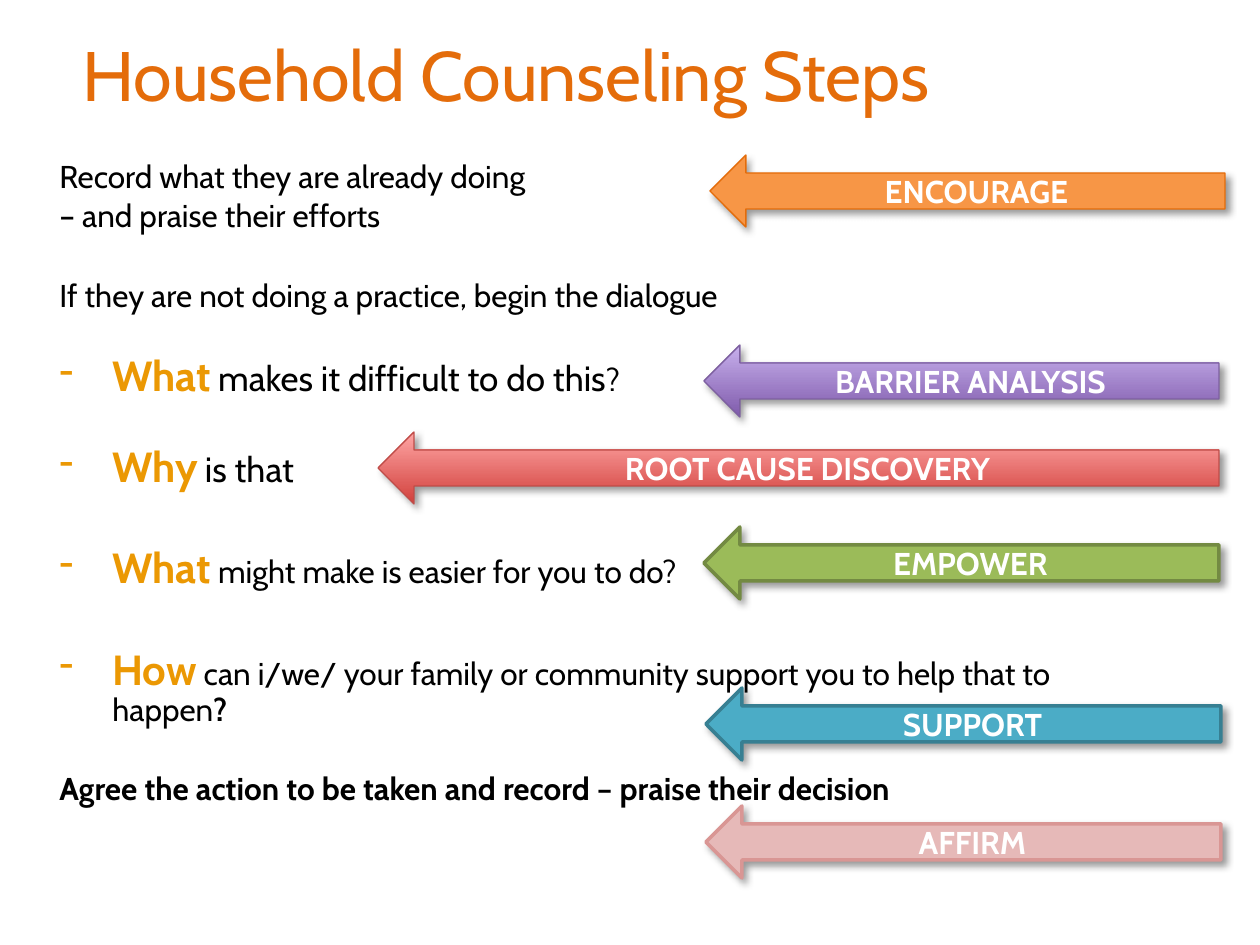
from dataclasses import dataclass
from typing import Any

from lxml import etree
from pptx import Presentation
from pptx import util as u
from pptx.dml.color import RGBColor
from pptx.enum import shapes, text
from pptx.oxml.ns import qn

PX = 914400 // 126
BLACK = RGBColor(0x00, 0x00, 0x00)
WHITE = RGBColor(0xFF, 0xFF, 0xFF)
ORANGE = RGBColor(0xE4, 0x6C, 0x0A)
AMBER = RGBColor(0xEB, 0x98, 0x03)
LIGHT_ORANGE = RGBColor(0xF7, 0x96, 0x46)
PURPLE = RGBColor(0x7F, 0x5B, 0xAB)
LILAC = RGBColor(0xC8, 0xB0, 0xED)
PURPLE_EDGE = RGBColor(0x7D, 0x60, 0xA0)
RED = RGBColor(0xD1, 0x40, 0x3C)
PINK = RGBColor(0xFF, 0xA6, 0xA5)
RED_EDGE = RGBColor(0xBF, 0x4C, 0x48)
GREEN = RGBColor(0x9B, 0xBB, 0x59)
GREEN_EDGE = RGBColor(0x73, 0x8A, 0x42)
TEAL = RGBColor(0x4B, 0xAC, 0xC6)
TEAL_EDGE = RGBColor(0x37, 0x7F, 0x92)
ROSE = RGBColor(0xE6, 0xB9, 0xB8)
ROSE_EDGE = RGBColor(0xD9, 0x96, 0x94)

# Space before, bulleted, runs of (text, size, colour, bold)
STEPS = [
    (0, False, [("Record what they are already doing", 18, BLACK, False)]),
    (3, False, [("– and praise their efforts", 18, BLACK, False)]),
    (26, False, [("If they are not doing a practice, begin the dialogue", 18, BLACK, False)]),
    (23.5, True, [("What", 24, AMBER, True), (" ", 18, BLACK, False),
                  ("makes it difficult to do this", 20, BLACK, False),
                  ("?", 18, BLACK, False)]),
    (26, True, [("Why", 24, AMBER, True), (" ", 18, BLACK, False),
                ("is that", 20, BLACK, False)]),
    (32, True, [("What", 24, AMBER, True),
                (" might make is easier for you to do?", 18, BLACK, False)]),
    (32, True, [("How", 24, AMBER, True),
                (" can i/we/ your family or community support you to help that to happen",
                 18, BLACK, False), ("?", 18, BLACK, True)]),
    (26, False, [("Agree the action to be taken and record – praise their decision",
                  18, BLACK, True)]),
]

# Label, left, top, width, fill colours from bottom to top, edge, edge width
ARROWS = [
    ("ROOT CAUSE DISCOVERY", 378, 432, 841, (RED, PINK), RED_EDGE, 0.75),
    ("BARRIER ANALYSIS", 704, 345, 515, (PURPLE, LILAC), PURPLE_EDGE, 0.75),
    ("EMPOWER", 704, 527, 515, (GREEN,), GREEN_EDGE, 2),
    ("SUPPORT", 706, 688, 515, (TEAL,), TEAL_EDGE, 2),
    ("ENCOURAGE", 710, 155, 515, (LIGHT_ORANGE,), ORANGE, 0.75),
    ("AFFIRM", 706, 806, 515, (ROSE,), ROSE_EDGE, 2),
]
ARROW_HEIGHT = 72


@dataclass
class Painter:
    page: Any
    face: str = "Cabin"

    def style(self, font, size, color, bold=False):
        font.name, font.size, font.bold = self.face, u.Pt(size), bold
        font.color.rgb = color

    def title(self, words, left, top, width, height):
        box = self.page.shapes.title
        box.left, box.top, box.width, box.height = (
            n * PX for n in (left, top, width, height))
        frame = box.text_frame
        frame.text = words
        frame.vertical_anchor = text.MSO_ANCHOR.MIDDLE
        para = frame.paragraphs[0]
        para.alignment = text.PP_ALIGN.CENTER
        self.style(para.runs[0].font, 40, ORANGE)

    def steps(self, steps, left, top, width, height):
        box = self.page.shapes.add_textbox(*(n * PX for n in (left, top, width, height)))
        frame = box.text_frame
        frame.word_wrap = True
        for index, (gap, bulleted, runs) in enumerate(steps):
            para = frame.add_paragraph() if index else frame.paragraphs[0]
            para.line_spacing = 0.9
            para.space_before = u.Pt(gap)
            self.indent(para, bulleted)
            for words, size, color, bold in runs:
                span = para.add_run()
                span.text = words
                self.style(span.font, size, color, bold)

    def indent(self, para, bulleted):
        """Set the left margin, with a hanging dash if bulleted."""
        props = para._p.get_or_add_pPr()
        props.set("marL", str((100 if bulleted else 47) * PX))
        props.set("indent", str((-53 if bulleted else 0) * PX))
        if bulleted:
            etree.SubElement(props, qn("a:buChar"), char="-")

    def arrow(self, label, left, top, width, colors, edge, weight):
        shape = self.page.shapes.add_shape(
            shapes.MSO_SHAPE.LEFT_ARROW,
            *(n * PX for n in (left, top, width, ARROW_HEIGHT)))
        if len(colors) > 1:
            shape.fill.gradient()
            shape.fill.gradient_angle = 90
            for stop, color in zip(shape.fill.gradient_stops, colors):
                stop.color.rgb = color
        else:
            shape.fill.solid()
            shape.fill.fore_color.rgb = colors[0]
        shape.line.color.rgb = edge
        shape.line.width = u.Pt(weight)
        self.drop_shadow(shape)
        frame = shape.text_frame
        frame.text = label
        frame.vertical_anchor = text.MSO_ANCHOR.MIDDLE
        para = frame.paragraphs[0]
        para.alignment = text.PP_ALIGN.CENTER
        self.style(para.runs[0].font, 18, WHITE, True)

    def drop_shadow(self, shape):
        """Replace the theme shadow by a soft one to the lower right."""
        shape.shadow.inherit = False
        effects = shape._element.spPr.find(qn("a:effectLst"))
        outer = etree.SubElement(
            effects, qn("a:outerShdw"), blurRad=str(u.Pt(4)), dist=str(u.Pt(3)),
            dir="2700000", algn="tl", rotWithShape="0")
        color = etree.SubElement(outer, qn("a:srgbClr"), val=str(BLACK))
        etree.SubElement(color, qn("a:alpha"), val="40000")


def main():
    deck = Presentation()
    deck.slide_width, deck.slide_height = u.Inches(10), u.Inches(7.5)
    painter = Painter(deck.slides.add_slide(deck.slide_layouts[5]))
    painter.title("Household Counseling Steps", -45, 32, 1102, 84)
    painter.steps(STEPS, 0, 155, 1063, 753)
    for arrow in ARROWS:
        painter.arrow(*arrow)
    deck.save("out.pptx")


if __name__ == "__main__":
    main()
